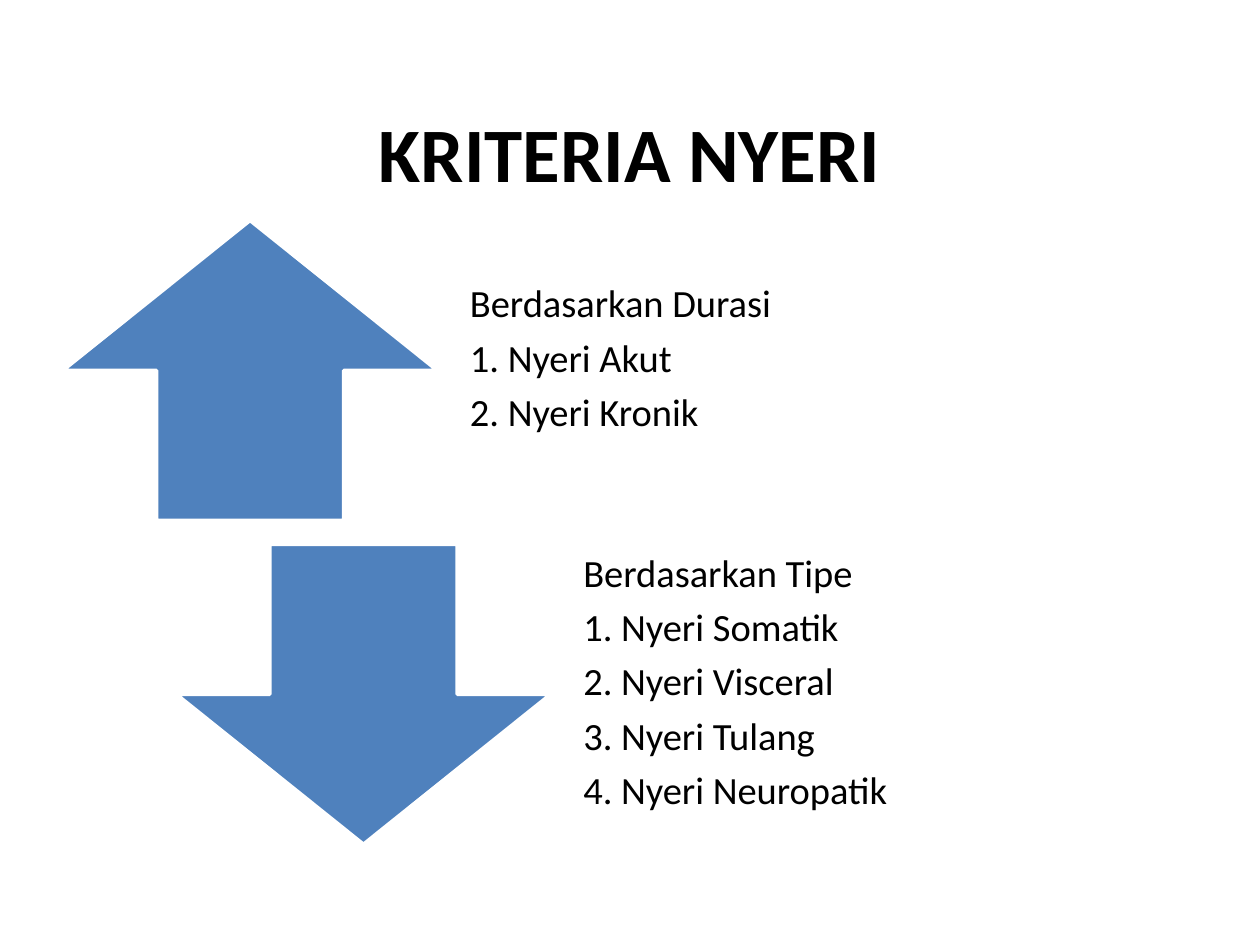
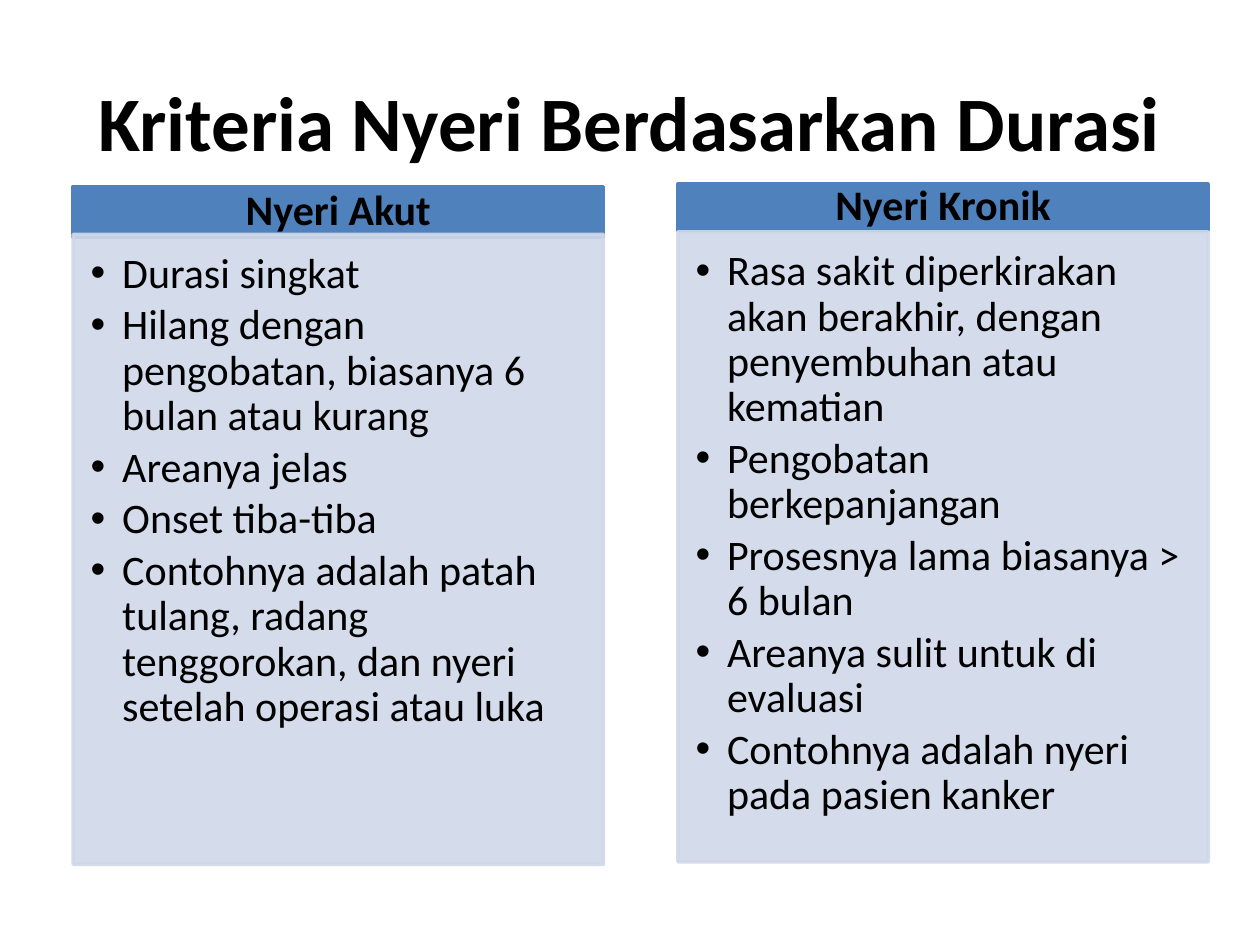
from lxml import etree
from pptx import Presentation
from pptx.dml.color import RGBColor
from pptx.enum.shapes import MSO_SHAPE
from pptx.enum.text import MSO_ANCHOR, MSO_AUTO_SIZE, PP_ALIGN
from pptx.oxml.ns import qn
from pptx.util import Inches, Pt

UP_ARROW, DOWN_ARROW = MSO_SHAPE.UP_ARROW, MSO_SHAPE.DOWN_ARROW
TOP, MIDDLE = MSO_ANCHOR.TOP, MSO_ANCHOR.MIDDLE
LEFT, CENTER = PP_ALIGN.LEFT, PP_ALIGN.CENTER
NO_AUTOFIT = MSO_AUTO_SIZE.NONE

COLORS = {"text": "000000", "accent": "4F81BD", "panel": "D0D8E8", "paper": "FFFFFF"}
FONT = "Calibri"
TWO_CONTENT, COMPARISON = 3, 4
TITLE_HEIGHT = 1.25
ARROW_WIDTH, ARROW_HEIGHT = 2.97, 2.38
LABEL_OFFSET, LABEL_WIDTH = 3.06, 5.04
PANEL_WIDTH, PANEL_HEIGHT = 4.21, 5

DURATION = ["Berdasarkan Durasi", "1. Nyeri Akut", "2. Nyeri Kronik"]
KINDS = ["Berdasarkan Tipe", "1. Nyeri Somatik", "2. Nyeri Visceral",
         "3. Nyeri Tulang", "4. Nyeri Neuropatik"]
ACUTE = [
    "Durasi singkat",
    "Hilang dengan pengobatan, biasanya 6 bulan atau kurang",
    "Areanya jelas",
    "Onset tiba-tiba",
    "Contohnya adalah patah tulang, radang tenggorokan, dan nyeri setelah operasi atau luka",
]
CHRONIC = [
    "Rasa sakit diperkirakan akan berakhir, dengan penyembuhan atau kematian",
    "Pengobatan berkepanjangan",
    "Prosesnya lama biasanya > 6 bulan",
    "Areanya sulit untuk di evaluasi",
    "Contohnya adalah nyeri pada pasien kanker",
]


def place(shape, left, top, width, height):
    shape.left, shape.top = Inches(left), Inches(top)
    shape.width, shape.height = Inches(width), Inches(height)


def paint(shape, fill, line, opacity=100):
    for paint_format, color in ((shape.fill, fill), (shape.line.fill, line)):
        paint_format.solid()
        paint_format.fore_color.rgb = RGBColor.from_string(COLORS[color])
    shape.line.width = Pt(2)
    if opacity < 100:
        for color in shape._element.spPr.iter(qn("a:srgbClr")):
            etree.SubElement(color, qn("a:alpha"), val=str(opacity * 1000))


def set_bullet(para, bullet):
    properties = para._p.get_or_add_pPr()
    indent = Inches(0.25) if bullet else 0
    properties.set("marL", str(indent))
    properties.set("indent", str(-indent))
    if bullet:
        etree.SubElement(properties, qn("a:buChar"), char="•")
    else:
        etree.SubElement(properties, qn("a:buNone"))


def write(shape, lines, size, bold=False, align=LEFT, anchor=MIDDLE,
          insets=(0.1, 0.05, 0.1, 0.05), spacing=0.9, after=0, bullet=False):
    frame = shape.text_frame
    frame.word_wrap = True
    frame.auto_size = NO_AUTOFIT
    frame.vertical_anchor = anchor
    (frame.margin_left, frame.margin_top,
     frame.margin_right, frame.margin_bottom) = map(Inches, insets)
    frame.text = "\n".join(lines)
    for para in frame.paragraphs:
        set_bullet(para, bullet)
        para.alignment = align
        para.line_spacing = spacing
        para.space_before, para.space_after = Pt(0), Pt(after)
        for span in para.runs:
            span.font.name, span.font.size, span.font.bold = FONT, Pt(size), bold
            span.font.color.rgb = RGBColor.from_string(COLORS["text"])


def add_page(deck, layout, title, title_top):
    page = deck.slides.add_slide(deck.slide_layouts[layout])
    place(page.shapes.title, 0.5, title_top, 9, TITLE_HEIGHT)
    write(page.shapes.title, [title], 44, bold=True, align=CENTER, spacing=1.0)
    return page


def add_arrow_row(page, label, kind, lines, left, top):
    arrow = page.shapes.add_shape(kind, Inches(left), Inches(top),
                                  Inches(ARROW_WIDTH), Inches(ARROW_HEIGHT))
    arrow.shadow.inherit = False
    paint(arrow, "accent", "paper")
    place(label, left + LABEL_OFFSET, top, LABEL_WIDTH, ARROW_HEIGHT)
    write(label, lines, 22, insets=(0.17, 0, 0.17, 0.17), after=7.3)


def fill_panel(header, body, heading, items, left, top, header_height):
    place(header, left, top, PANEL_WIDTH, header_height)
    paint(header, "accent", "accent")
    write(header, [heading], 24, bold=True, align=CENTER,
          insets=(0.19, 0.11, 0.19, 0.11))
    place(body, left, top + 0.38, PANEL_WIDTH, PANEL_HEIGHT)
    paint(body, "panel", "panel", opacity=90)
    write(body, items, 24, anchor=TOP, insets=(0.14, 0.14, 0.19, 0.21),
          after=3.6, bullet=True)


def add_criteria_page(deck):
    page = add_page(deck, TWO_CONTENT, "KRITERIA NYERI", 0.58)
    _, duration, kinds = list(page.placeholders)[:3]
    add_arrow_row(page, duration, UP_ARROW, DURATION, 0.5, 1.75)
    add_arrow_row(page, kinds, DOWN_ARROW, KINDS, 1.4, 4.32)


def add_duration_page(deck):
    page = add_page(deck, COMPARISON, "Kriteria Nyeri Berdasarkan Durasi", 0.33)
    _, acute_header, acute_body, chronic_header, chronic_body = list(page.placeholders)[:5]
    fill_panel(acute_header, acute_body, "Nyeri Akut", ACUTE, 0.58, 1.48, 0.4)
    fill_panel(chronic_header, chronic_body, "Nyeri Kronik", CHRONIC, 5.38, 1.46, 0.37)


def main():
    deck = Presentation()
    deck.slide_width, deck.slide_height = Inches(10), Inches(7.5)
    add_criteria_page(deck)
    add_duration_page(deck)
    deck.save("out.pptx")


if __name__ == "__main__":
    main()
